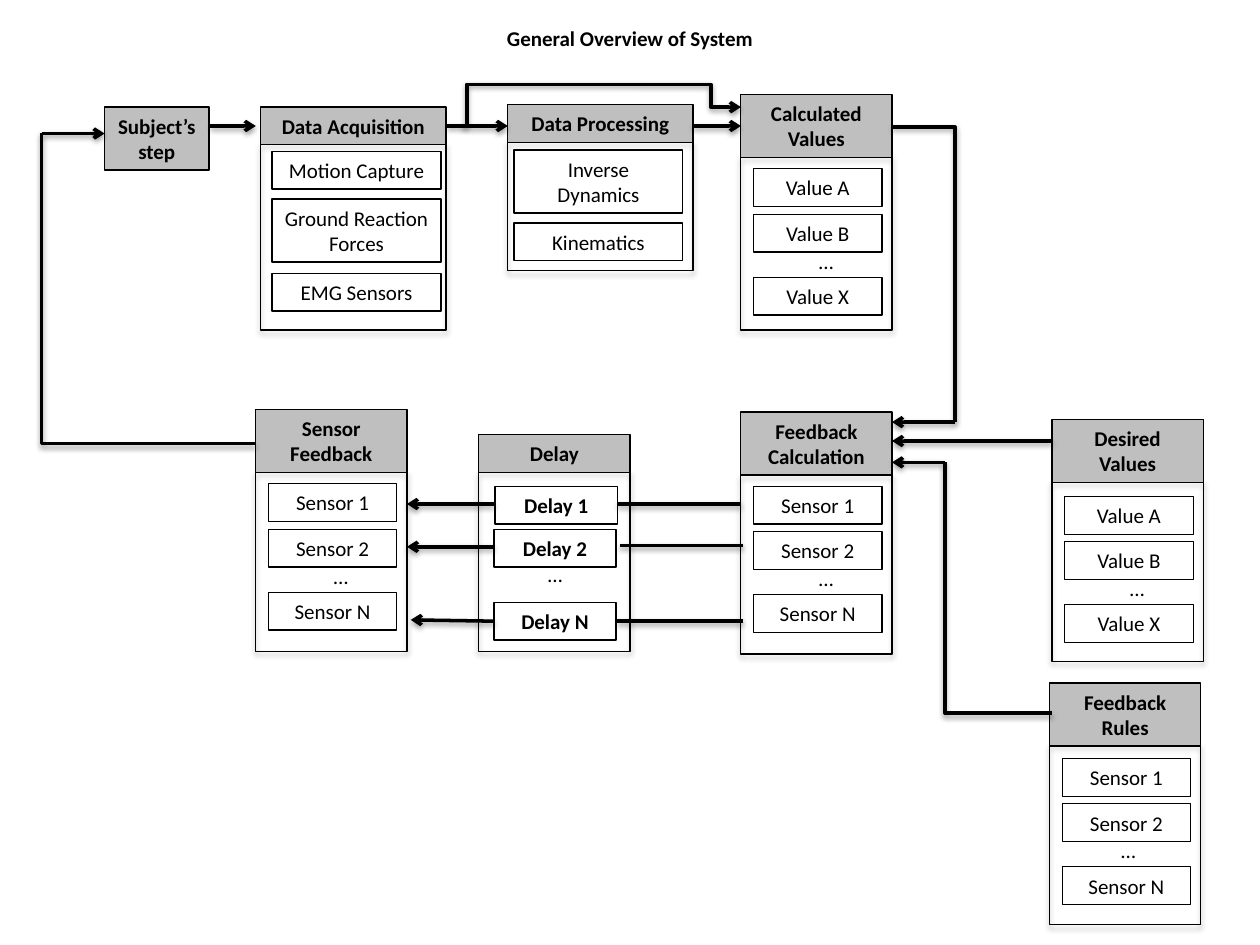
from dataclasses import dataclass, field
from typing import Any, NamedTuple

import lxml.etree
import pptx
import pptx.dml.color
import pptx.enum.shapes
import pptx.enum.text
import pptx.oxml.ns
import pptx.util

SCALE = 9144  # EMU per px, 100 px to the inch
qn = pptx.oxml.ns.qn
Rgb = pptx.dml.color.RGBColor
Link = pptx.enum.shapes.MSO_CONNECTOR
Align = pptx.enum.text.PP_ALIGN
Anchor = pptx.enum.text.MSO_ANCHOR


@dataclass(frozen=True)
class Theme:
    ink: Rgb = Rgb(0, 0, 0)
    head: Rgb = Rgb(0xBF, 0xBF, 0xBF)
    font: str = "Calibri"
    size: int = 12
    thin: float = 0.75
    thick: float = 2


THEME = Theme()


class Box(NamedTuple):
    x: int
    y: int
    w: int
    h: int


class Item(NamedTuple):
    """A labelled box, placed from the top left of its panel's body."""
    text: str
    box: Box
    bold: bool = False


class Dots(NamedTuple):
    x: int
    y: int


@dataclass(frozen=True)
class Panel:
    title: str
    head: Box
    body: int
    items: list[Item]
    dots: list[Dots] = field(default_factory=list)


class Wire(NamedTuple):
    x1: int
    y1: int
    x2: int
    y2: int
    arrow: bool = True
    kind: str = "line"
    bend: int | None = None  # thousandths of a percent


def emu(*px: int) -> list[int]:
    return [n * SCALE for n in px]


def format_all(target: Any, **values: Any) -> None:
    for name, value in values.items():
        setattr(target, name, value)


def write(frame: Any, text: str, bold: bool = False, align: Any = Align.CENTER,
          anchor: Any = Anchor.TOP) -> None:
    format_all(frame, text=text, word_wrap=True, vertical_anchor=anchor)
    for para in frame.paragraphs:
        para.alignment = align
        for run in para.runs:
            format_all(run.font, name=THEME.font, bold=bold,
                       size=pptx.util.Pt(THEME.size))
            run.font.color.rgb = THEME.ink


def stroke(line: Any, width: float) -> None:
    line.color.rgb = THEME.ink
    line.width = pptx.util.Pt(width)


def shade(shape: Any, alpha: int, dist: int) -> None:
    """Drop a soft shadow straight down."""
    add = lxml.etree.SubElement
    props = shape.element.spPr
    for old in props.findall(qn("a:effectLst")):
        props.remove(old)
    drop = add(add(props, qn("a:effectLst")), qn("a:outerShdw"), blurRad="40000",
               dist=str(dist), dir="5400000", rotWithShape="0")
    color = add(drop, qn("a:srgbClr"), val=str(THEME.ink))
    add(color, qn("a:alpha"), val=str(alpha * 1000))


def draw_box(shapes: Any, box: Box, text: str = "", bold: bool = False,
             fill: Rgb | None = None) -> Any:
    shape = shapes.add_shape(pptx.enum.shapes.MSO_SHAPE.RECTANGLE, *emu(*box))
    if fill is None:
        shape.fill.background()
    else:
        shape.fill.solid()
        shape.fill.fore_color.rgb = fill
    stroke(shape.line, THEME.thin)
    shape.shadow.inherit = False
    if text:
        write(shape.text_frame, text, bold)
    return shape


def draw_panel(shapes: Any, panel: Panel) -> None:
    x, y, w, h = panel.head
    top = y + h
    for item in panel.items:
        box = item.box
        draw_box(shapes, Box(x + box.x, top + box.y, box.w, box.h), item.text, item.bold)
    shade(draw_box(shapes, Box(x, top, w, panel.body)), 35, 23000)
    draw_box(shapes, panel.head, panel.title, True, THEME.head)
    for dot in panel.dots:
        label = shapes.add_textbox(*emu(x + dot.x, top + dot.y, 24, 50))
        write(label.text_frame, "…", align=Align.LEFT)


def draw_wire(shapes: Any, wire: Wire) -> None:
    kind = Link.STRAIGHT if wire.kind == "line" else Link.ELBOW
    link = shapes.add_connector(kind, *emu(*wire[:4]))
    stroke(link.line, THEME.thick)
    props = link.element.spPr
    geom = props.find(qn("a:prstGeom"))
    geom.set("prst", wire.kind)
    if wire.bend is not None:
        lxml.etree.SubElement(geom.find(qn("a:avLst")), qn("a:gd"), name="adj1",
                              fmla=f"val {wire.bend}")
    if wire.arrow:
        lxml.etree.SubElement(props.find(qn("a:ln")), qn("a:tailEnd"), type="arrow")
    shade(link, 38, 20000)


def series(title: str, x: int, y: int, names: list[str], body: int = 142,
           inset: int = 9, dot: int = 52) -> Panel:
    """A panel of two first members, dots and a last member."""
    items = [Item(name, Box(10, inset + step, 102, 30))
             for name, step in zip(names, (0, 36, 86))]
    return Panel(title, Box(x, y, 120, 50), body, items, [Dots(dot, inset + 58)])


VALUES = ["Value A", "Value B", "Value X"]
SENSORS = ["Sensor 1", "Sensor 2", "Sensor N"]

PANELS = [
    Panel("Data Acquisition", Box(207, 85, 147, 30), 147, [
        Item("Motion Capture", Box(9, 5, 134, 30)),
        Item("Ground Reaction Forces", Box(9, 43, 134, 50)),
        Item("EMG Sensors", Box(9, 102, 134, 30))]),
    Panel("Data Processing", Box(403, 83, 147, 30), 102, [
        Item("Inverse Dynamics", Box(5, 6, 134, 50)),
        Item("Kinematics", Box(5, 64, 134, 30))]),
    series("Calculated Values", 588, 75, VALUES, body=137),
    series("Desired\nValues", 835, 333, VALUES, inset=11),
    series("Feedback Calculation", 588, 327, SENSORS),
    series("Sensor Feedback", 203, 325, SENSORS),
    series("Feedback Rules", 833, 542, SENSORS, inset=10, dot=47),
    Panel("Delay", Box(380, 345, 120, 30), 142, [
        Item("Delay 1", Box(13, 11, 97, 30), True),
        Item("Delay 2", Box(12, 45, 97, 30), True),
        Item("Delay N", Box(12, 103, 97, 30), True)], [Dots(45, 66)]),
]

WIRES = [
    # Top row, with the bypass over data processing
    Wire(167, 100, 203, 100),
    Wire(367, 100, 403, 100),
    Wire(550, 100, 588, 100),
    Wire(510, 67, 588, 85, kind="bentConnector3", bend=69400),
    Wire(355, 100, 510, 67, False, "bentConnector3", 10000),
    # Into the feedback calculation
    Wire(708, 101, 758, 335, False, "bentConnector2"),
    Wire(758, 335, 708, 335),
    Wire(835, 350, 708, 350),
    Wire(835, 566, 750, 367, False, "bentConnector2"),
    Wire(750, 367, 708, 367),
    # Through the delays
    Wire(588, 400, 490, 400, False),
    Wire(590, 433, 492, 433, False),
    Wire(590, 493, 490, 493, False),
    Wire(392, 400, 323, 400),
    Wire(392, 434, 323, 434),
    Wire(392, 493, 326, 492),
    # Back to the subject
    Wire(203, 352, 33, 106, False, "bentConnector2"),
    Wire(33, 106, 83, 106),
]


def main() -> None:
    deck = pptx.Presentation()
    format_all(deck, slide_width=1000 * SCALE, slide_height=750 * SCALE)
    shapes = deck.slides.add_slide(deck.slide_layouts[5]).shapes

    # Title
    left, top, width, height = emu(50, 8, 900, 45)
    format_all(shapes.title, left=left, top=top, width=width, height=height)
    write(shapes.title.text_frame, "General Overview of System", True,
          anchor=Anchor.MIDDLE)

    # Panels and the wires between them
    draw_box(shapes, Box(83, 85, 83, 50), "Subject’s\nstep", True, THEME.head)
    for panel in PANELS:
        draw_panel(shapes, panel)
    for wire in WIRES:
        draw_wire(shapes, wire)
    deck.save("out.pptx")


if __name__ == "__main__":
    main()
